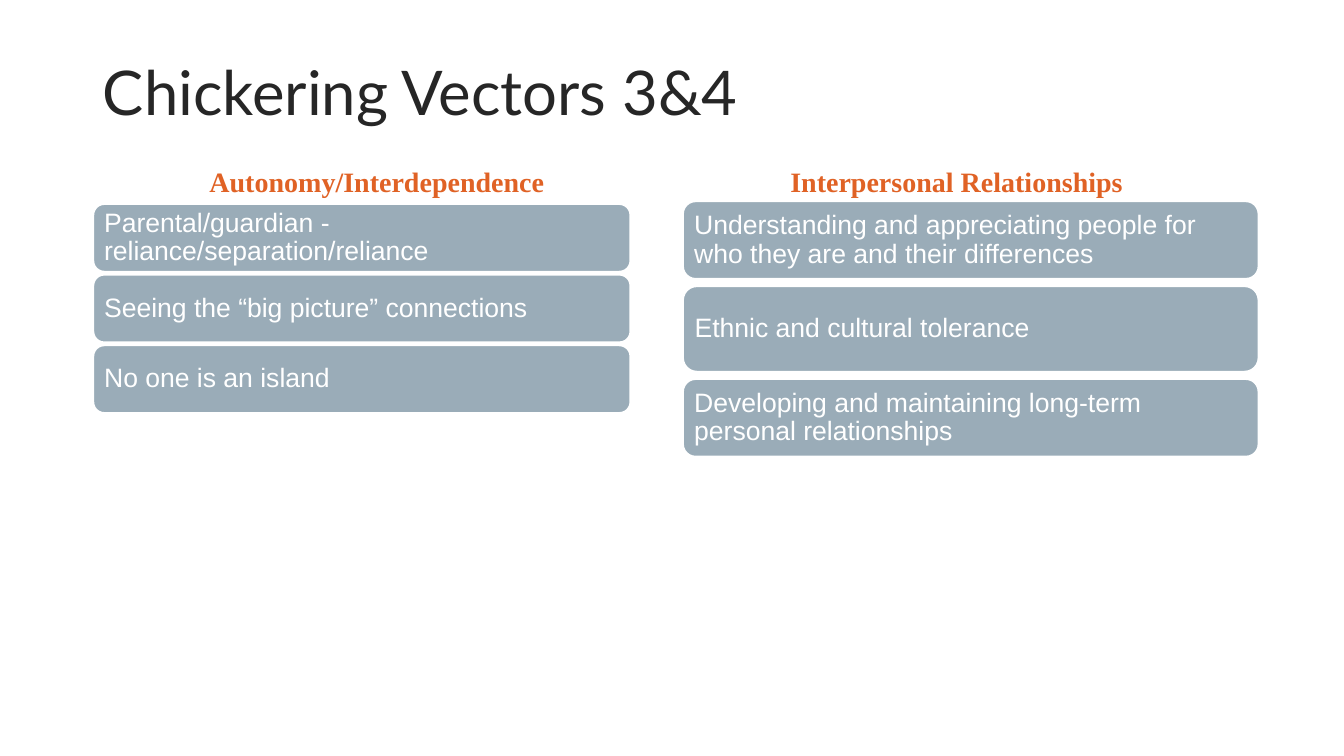
import pptx
import pptx.dml.color
import pptx.enum.shapes
import pptx.enum.text
import pptx.util

Cm = pptx.util.Cm
Pt = pptx.util.Pt
ALIGN = pptx.enum.text.PP_ALIGN
MIDDLE = pptx.enum.text.MSO_ANCHOR.MIDDLE

HUES = {"title": "262626", "head": "E06225", "bar": "9AACB8", "white": "FFFFFF"}

# Boxes are left, top, width, height; bars are left, top, width, gap, heights (cm)
COLUMNS = [
    {
        "head": "Autonomy/Interdependence",
        "box": (1.04, 4.01, 16.92, 1.12),
        "bars": (2.34, 5.13, 13.56, 0.05, (1.73, 1.73, 1.73)),
        "points": [
            "Parental/guardian - reliance/separation/reliance",
            "Seeing the “big picture” connections",
            "No one is an island",
        ],
    },
    {
        "head": "Interpersonal Relationships",
        "box": (15.65, 4.01, 16.92, 1.12),
        "bars": (17.2, 5.06, 14.53, 0.16, (1.98, 2.18, 1.98)),
        "points": [
            "Understanding and appreciating people for who they are and their differences",
            "Ethnic and cultural tolerance",
            "Developing and maintaining long-term personal relationships",
        ],
    },
]


def color(name):
    return pptx.dml.color.RGBColor.from_string(HUES[name])


def write(frame, text, face, size, hue, align, bold=False):
    frame.word_wrap = True
    para = frame.paragraphs[0]
    para.alignment = align
    run = para.add_run()
    run.text = text
    run.font.name = face
    run.font.size = Pt(size)
    run.font.bold = bold
    run.font.color.rgb = color(hue)
    return para


def add_title(slide, box, text):
    title = slide.shapes.title
    title.left, title.top, title.width, title.height = map(Cm, box)
    frame = title.text_frame
    frame.vertical_anchor = MIDDLE
    frame.auto_size = pptx.enum.text.MSO_AUTO_SIZE.NONE
    write(frame, text, "Lato", 44, "title", ALIGN.LEFT).line_spacing = 0.9


def add_head(slide, box, text):
    frame = slide.shapes.add_textbox(*map(Cm, box)).text_frame
    write(frame, text, "Times New Roman", 20, "head", ALIGN.CENTER, True)


def add_bar(slide, box, text):
    kind = pptx.enum.shapes.MSO_SHAPE.ROUNDED_RECTANGLE
    bar = slide.shapes.add_shape(kind, *map(Cm, box))
    bar.shadow.inherit = False
    bar.fill.solid()
    bar.fill.fore_color.rgb = color("bar")
    bar.line.color.rgb = color("white")
    bar.line.width = Pt(2)
    frame = bar.text_frame
    frame.margin_left = frame.margin_right = Cm(0.2)
    frame.margin_top = frame.margin_bottom = Cm(0.2)
    frame.vertical_anchor = MIDDLE
    write(frame, text, "Arial", 19, "white", ALIGN.LEFT).line_spacing = 0.9


def add_bars(slide, stack, points):
    left, top, width, gap, heights = stack
    for text, height in zip(points, heights):
        add_bar(slide, (left, top, width, height), text)
        top += height + gap


def main():
    deck = pptx.Presentation()
    deck.slide_width, deck.slide_height = Cm(33.87), Cm(19.05)
    slide = deck.slides.add_slide(deck.slide_layouts[5])

    add_title(slide, (2.34, 0.56, 29.21, 3.68), "Chickering Vectors 3&4")

    # Two columns, each a heading over a stack of bars
    for column in COLUMNS:
        add_head(slide, column["box"], column["head"])
        add_bars(slide, column["bars"], column["points"])

    deck.save("out.pptx")


if __name__ == "__main__":
    main()
